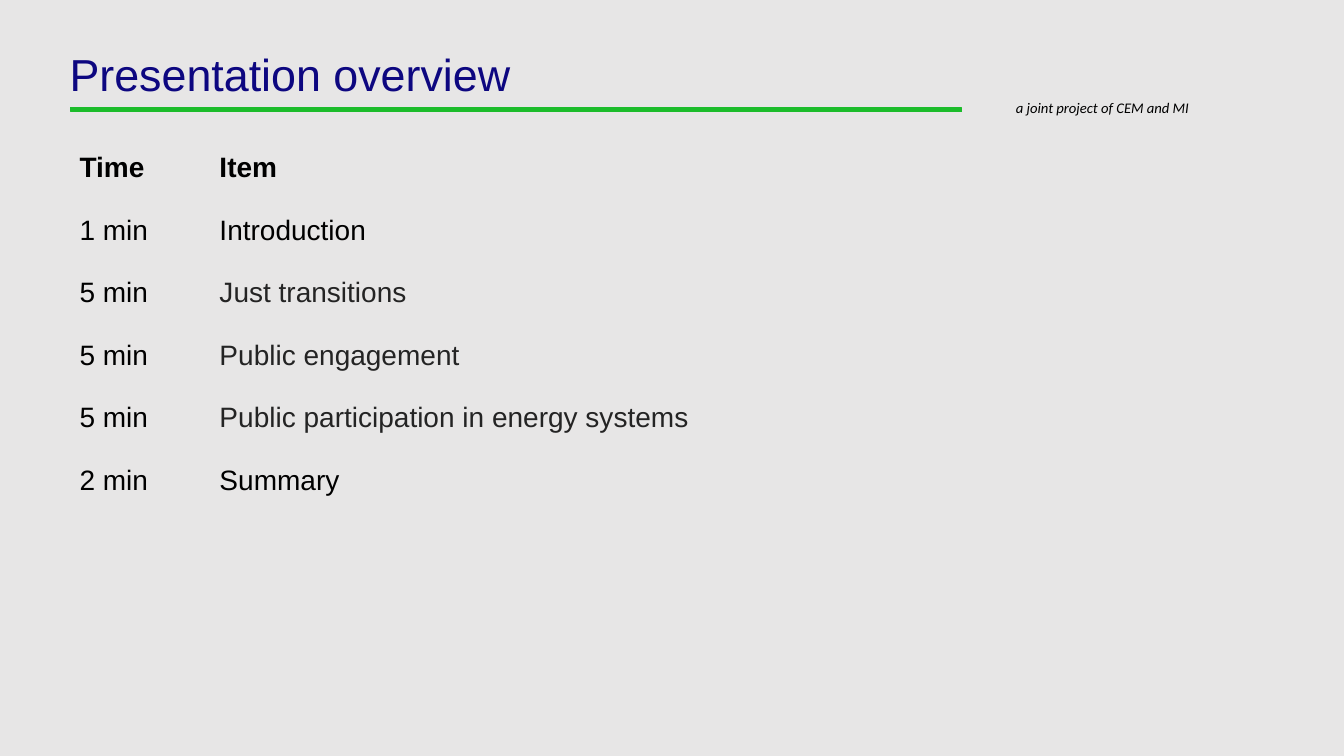
from pptx import Presentation
from pptx.dml.color import RGBColor
from pptx.enum import text
from pptx.oxml.ns import qn
from pptx.util import Pt


def rgb(value):
    return RGBColor.from_string(value)


def style(p, font, size, color, bold=False, italic=False):
    for r in p.runs:
        r.font.name = font
        r.font.size = Pt(size)
        r.font.color.rgb = rgb(color)
        r.font.bold = bold
        r.font.italic = italic


prs = Presentation()
prs.slide_width, prs.slide_height = Pt(960), Pt(540)
s = prs.slides.add_slide(prs.slide_layouts[5])
s.background.fill.solid()
s.background.fill.fore_color.rgb = rgb("E7E6E6")

left, top, right, bottom = Pt(50.4), Pt(77), Pt(686.9), Pt(79.9)
outline = s.shapes.build_freeform(left, top)
outline.add_line_segments([(right, top), (right, bottom), (left, bottom)], close=True)
rule = outline.convert_to_shape()
rule.shadow.inherit = False
rule.fill.solid()
rule.fill.fore_color.rgb = rgb("1CBC2B")
rule.line.color.rgb = rgb("1CBC2B")
rule.line.width = Pt(0.75)

note = s.shapes.add_textbox(Pt(718.5), Pt(67), Pt(175), Pt(20))
tf = note.text_frame
tf.word_wrap = True
tf.text = "a joint project of CEM and MI"
style(tf.paragraphs[0], "Calibri", 10.5, "000000", italic=True)

title = s.shapes.title
title.left, title.top, title.width, title.height = Pt(49.7), Pt(37.4), Pt(638), Pt(34.6)
tf = title.text_frame
tf.text = "Presentation overview"
tf.margin_left = tf.margin_right = tf.margin_top = tf.margin_bottom = 0
tf.vertical_anchor = text.MSO_ANCHOR.MIDDLE
tf.word_wrap = True
p = tf.paragraphs[0]
p.alignment = text.PP_ALIGN.LEFT
p.line_spacing = 0.9
style(p, "Arial", 32, "0D0780")

agenda = [
    ("Time", "Item", "000000"),
    ("1 min", "Introduction", "000000"),
    ("5 min", "Just transitions", "242424"),
    ("5 min", "Public engagement", "242424"),
    ("5 min", "Public participation in energy systems", "242424"),
    ("2 min", "Summary", "000000"),
]
row_height = 44.7
frame = s.shapes.add_table(len(agenda), 2, Pt(49.6), Pt(105.1), Pt(658), Pt(row_height * len(agenda)))
table = frame.table
table.horz_banding = False
table.first_row = False
table_style = frame.element.find(".//" + qn("a:tableStyleId"))
table_style.text = "{2D5ABB26-0587-4C30-8999-92F81FD0307C}"
table.columns[0].width = Pt(100)
table.columns[1].width = Pt(558)

for i, (time, item, color) in enumerate(agenda):
    table.rows[i].height = Pt(row_height)
    for j, (label, label_color) in enumerate([(time, "000000"), (item, color)]):
        cell = table.cell(i, j)
        cell.fill.background()
        cell.text_frame.text = label
        style(cell.text_frame.paragraphs[0], "Arial", 20, label_color, bold=i == 0)

prs.save("out.pptx")
